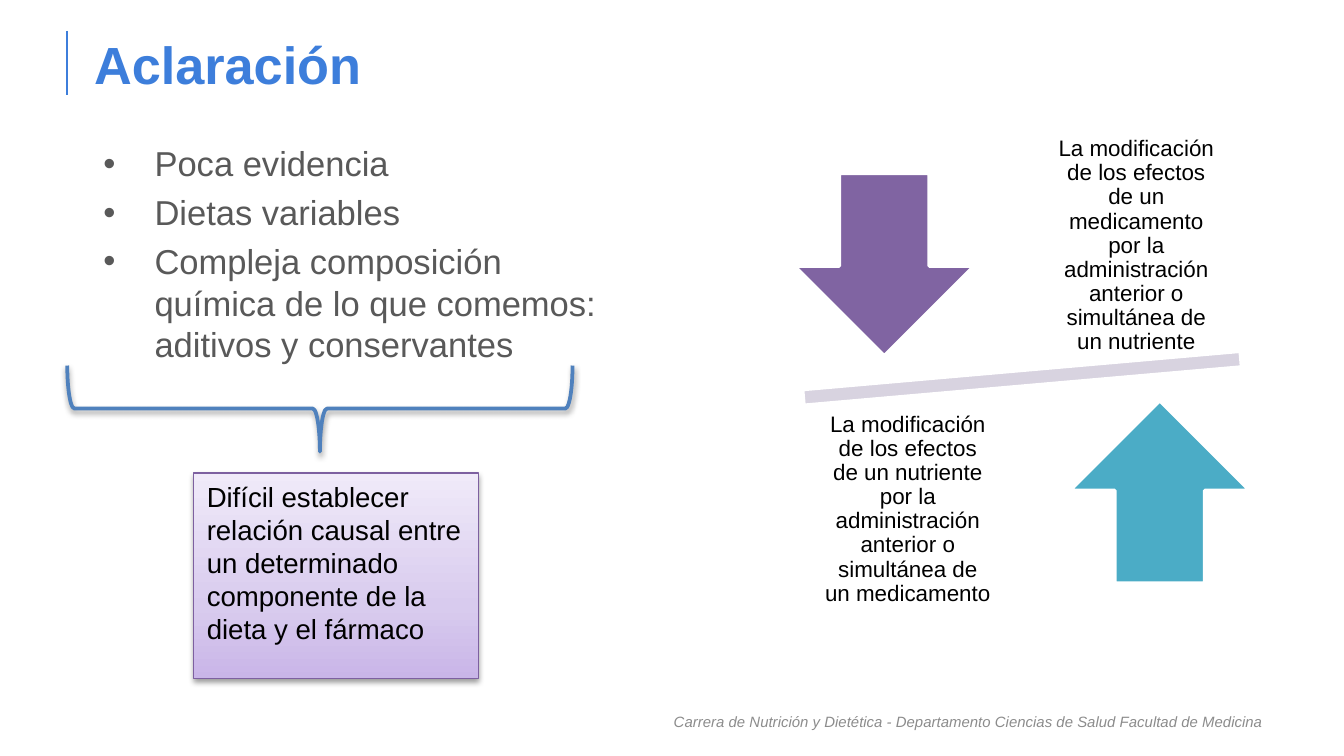
from dataclasses import dataclass
from lxml import etree
from pptx import Presentation
from pptx.dml.color import RGBColor
from pptx.enum.shapes import MSO_CONNECTOR, MSO_SHAPE
from pptx.enum.text import MSO_ANCHOR, MSO_AUTO_SIZE, PP_ALIGN
from pptx.oxml import parse_xml
from pptx.oxml.ns import nsdecls, qn
from pptx.util import Inches, Pt

LEFT, CENTER, RIGHT = PP_ALIGN.LEFT, PP_ALIGN.CENTER, PP_ALIGN.RIGHT
TOP, MIDDLE = MSO_ANCHOR.TOP, MSO_ANCHOR.MIDDLE
STRAIGHT = MSO_CONNECTOR.STRAIGHT
RECT, BRACE, MINUS = MSO_SHAPE.RECTANGLE, MSO_SHAPE.RIGHT_BRACE, MSO_SHAPE.MATH_MINUS
DOWN, UP = MSO_SHAPE.DOWN_ARROW, MSO_SHAPE.UP_ARROW


@dataclass
class Theme:
    font: str = "Arial"
    title: str = "3D7EDB"
    body: str = "595959"
    foot: str = "8C8C8C"
    ink: str = "000000"
    paper: str = "FFFFFF"
    brace: str = "4F81BD"
    edge: str = "7D60A0"
    bar: str = "D8D3E0"
    down: str = "8064A2"
    up: str = "4BACC6"
    fade: tuple = ((0, "C9B5E8"), (35, "D8CBEE"), (100, "F0EAF9"))
    title_pt: float = 28
    body_pt: float = 18.5
    box_pt: float = 14.8
    note_pt: float = 12
    foot_pt: float = 8


theme = Theme()


def write(shape, text, size, color, align=LEFT, anchor=TOP, pad=(0.1, 0.05)):
    """Fill the shape with text, one paragraph a line; pad is (side, top and bottom)."""
    frame = shape.text_frame
    frame.text = text
    frame.word_wrap = True
    frame.auto_size = MSO_AUTO_SIZE.NONE
    frame.vertical_anchor = anchor
    frame.margin_left = frame.margin_right = Inches(pad[0])
    frame.margin_top = frame.margin_bottom = Inches(pad[1])
    for para in frame.paragraphs:
        para.alignment = align
        for run in para.runs:
            run.font.name = theme.font
            run.font.size = Pt(size)
            run.font.color.rgb = RGBColor.from_string(color)
    return frame


def draw(kind, at, line, width, fill=None, turn=0, shade=False):
    """Add a preset shape, with a soft drop shadow if shade is set."""
    shape = slide.shapes.add_shape(kind, *map(Inches, at))
    shape.rotation = turn
    shape.line.color.rgb = RGBColor.from_string(line)
    shape.line.width = Pt(width)
    if fill:
        shape.fill.solid()
        shape.fill.fore_color.rgb = RGBColor.from_string(fill)
    else:
        shape.fill.background()
    shape.shadow.inherit = False
    if shade:
        shape._element.spPr.find(qn("a:effectLst")).append(parse_xml(
            f'<a:outerShdw {nsdecls("a")} blurRad="{Pt(3.1)}" dist="{Pt(1.6)}" '
            f'dir="5400000" rotWithShape="0"><a:srgbClr val="{theme.ink}">'
            '<a:alpha val="38000"/></a:srgbClr></a:outerShdw>'))
    return shape


deck = Presentation()
deck.slide_width = Inches(10)
deck.slide_height = deck.slide_width * 9 // 16
slide = deck.slides.add_slide(deck.slide_layouts[1])
title, body = slide.placeholders

# Title with its rule
rule = slide.shapes.add_connector(
    STRAIGHT, Inches(0.5), Inches(0.23), Inches(0.5), Inches(0.71))
rule.line.color.rgb = RGBColor.from_string(theme.title)
rule.line.width = Pt(1)
etree.SubElement(rule._element.spPr, qn("a:effectLst"))

title.left, title.top, title.width, title.height = map(Inches, (0.5, 0.23, 9, 0.49))
frame = write(title, "Aclaración", theme.title_pt, theme.title,
              anchor=MIDDLE, pad=(0.1, 0.12))
frame.margin_left = Inches(0.2)
frame.paragraphs[0].runs[0].font.bold = True

# Bullet list
body.left, body.top, body.width, body.height = map(Inches, (0.67, 1.01, 4.08, 1.67))
items = ("Poca evidencia", "Dietas variables",
         "Compleja composición química de lo que comemos: aditivos y conservantes")
frame = write(body, "\n".join(items), theme.body_pt, theme.body)
for para in frame.paragraphs:
    para.space_before = Pt(4)
    props = para._p.get_or_add_pPr()
    props.set("marL", str(Inches(0.38)))
    props.set("indent", str(Inches(-0.38)))
    etree.SubElement(props, qn("a:buFont")).set("typeface", theme.font)
    etree.SubElement(props, qn("a:buChar")).set("char", "•")

# Footer
foot = slide.shapes.add_textbox(*map(Inches, (0.5, 5.22, 9, 0.3)))
frame = write(foot, "Carrera de Nutrición y Dietética - Departamento Ciencias de Salud "
              "Facultad de Medicina", theme.foot_pt, theme.foot, RIGHT, MIDDLE, (0.1, 0.12))
frame.paragraphs[0].runs[0].font.italic = True

# Conclusion box under the brace
box = draw(RECT, (1.44, 3.52, 2.12, 1.53), theme.edge, 0.75, theme.paper, shade=True)
stops = "".join(f'<a:gs pos="{pos * 1000}"><a:srgbClr val="{color}"/></a:gs>'
                for pos, color in theme.fade)
solid = box._element.spPr.find(qn("a:solidFill"))
solid.getparent().replace(solid, parse_xml(
    f'<a:gradFill {nsdecls("a")} rotWithShape="1"><a:gsLst>{stops}</a:gsLst>'
    '<a:lin ang="16200000" scaled="0"/></a:gradFill>'))
frame = write(box, "Difícil establecer relación causal entre un determinado "
              "componente de la dieta y el fármaco", theme.box_pt, theme.ink)
frame.paragraphs[0].space_before = Pt(3)
draw(BRACE, (2.06, 1.16, 0.64, 3.76), theme.brace, 2, turn=90, shade=True)

# Balance: tilted bar, two arrows and their notes
draw(MINUS, (5.38, 2.56, 4.45, 0.51), theme.paper, 2, theme.bar, turn=355)
sides = (
    (DOWN, 5.91, 1.29, theme.down, 7.74, 1.12, "un medicamento", "un nutriente"),
    (UP, 7.96, 2.98, theme.up, 6.04, 3.08, "un nutriente", "un medicamento"),
)
for kind, x, y, color, note_x, note_y, target, cause in sides:
    draw(kind, (x, y, 1.34, 1.36), theme.paper, 2, color)
    note = slide.shapes.add_textbox(*map(Inches, (note_x, note_y, 1.43, 1.42)))
    frame = write(note, f"La modificación de los efectos de {target} por la administración "
                  f"anterior o simultánea de {cause}", theme.note_pt, theme.ink,
                  CENTER, MIDDLE, (0.09, 0.09))
    frame.paragraphs[0].line_spacing = 0.9

deck.save("out.pptx")
